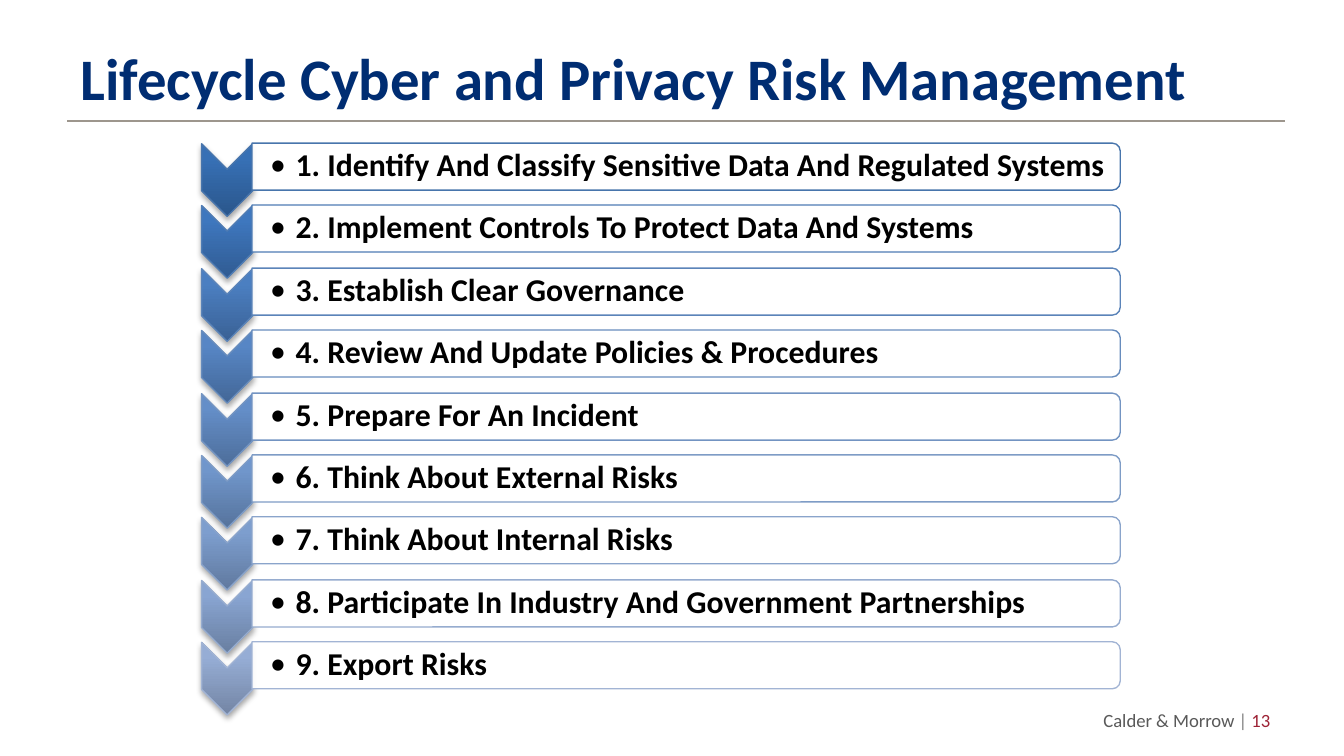
from lxml import etree
from pptx import Presentation
from pptx.dml.color import RGBColor
from pptx.enum.shapes import MSO_CONNECTOR, MSO_SHAPE
from pptx.enum.text import MSO_ANCHOR, PP_ALIGN
from pptx.oxml import parse_xml
from pptx.oxml.ns import qn
from pptx.util import Pt

PX = 9144  # 100 px to the inch
NS = 'xmlns:a="http://schemas.openxmlformats.org/drawingml/2006/main"'

STEPS = [
    "Identify And Classify Sensitive Data And Regulated Systems",
    "Implement Controls To Protect Data And Systems",
    "Establish Clear Governance",
    "Review And Update Policies & Procedures",
    "Prepare For An Incident",
    "Think About External Risks",
    "Think About Internal Risks",
    "Participate In Industry And Government Partnerships",
    "Export Risks",
]
# Each row: outline, then gradient stops at 0, 80 and 100 %
FIRST = ["4875AC", "2A568B", "3770B5", "3570B8"]
SECOND = ["4F7CB4", "305B92", "3E77BE", "3C77C1"]
LAST = ["A2B4D4", "7385A4", "96ADD5", "95ADD7"]


def color(code):
    return RGBColor.from_string(code)


def blend(start, end, part):
    pairs = zip(bytes.fromhex(start), bytes.fromhex(end))
    return "".join(f"{round(a + (b - a) * part):02X}" for a, b in pairs)


def tints(row):
    """The first row stands alone; the others fade evenly to the last."""
    if row == 0:
        return FIRST
    part = (row - 1) / (len(STEPS) - 2)
    return [blend(a, b, part) for a, b in zip(SECOND, LAST)]


class Deck:
    font = "Calibri"
    thin = Pt(0.75)

    def __init__(self, wide):
        """Start a 16:9 deck with one blank slide."""
        self.prs = Presentation()
        self.prs.slide_width = wide * PX
        self.prs.slide_height = wide * PX * 9 // 16
        self.slide = self.prs.slides.add_slide(self.prs.slide_layouts[6])

    def rule(self, x1, x2, y, tint):
        line = self.slide.shapes.add_connector(
            MSO_CONNECTOR.STRAIGHT, x1 * PX, y * PX, x2 * PX, y * PX)
        line.line.color.rgb = color(tint)
        line.line.width = self.thin
        etree.SubElement(line._element.spPr, qn("a:effectLst"))

    def text(self, box, runs, size, bold=False, align=PP_ALIGN.LEFT,
             inset=None, bullet=False):
        """Add a text box; runs is a list of (words, colour) pairs."""
        shape = self.slide.shapes.add_textbox(*(n * PX for n in box))
        frame = shape.text_frame
        frame.word_wrap = True
        frame.vertical_anchor = MSO_ANCHOR.MIDDLE
        if inset:
            (frame.margin_left, frame.margin_top, frame.margin_right,
             frame.margin_bottom) = (n * PX for n in inset)
        para = frame.paragraphs[0]
        para.alignment = align
        if bullet:
            para.level = 1
            para.line_spacing = 0.9
            props = para._p.get_or_add_pPr()
            props.set("marL", str(19 * PX))
            props.set("indent", str(-19 * PX))
            props.append(parse_xml(
                f'<a:buFont {NS} typeface="{self.font}"/>'))
            props.append(parse_xml(f'<a:buChar {NS} char="•"/>'))
        for words, tint in runs:
            run = para.add_run()
            run.text = words
            run.font.name = self.font
            run.font.size = Pt(size)
            run.font.bold = bold
            run.font.color.rgb = color(tint)

    def turned(self, kind, box, edge):
        """Add an outlined shape rotated a quarter turn."""
        shape = self.slide.shapes.add_shape(kind, *(n * PX for n in box))
        shape.rotation = 90
        shape.shadow.inherit = False
        shape.line.color.rgb = color(edge)
        shape.line.width = self.thin
        return shape

    def arrow(self, box, edge, stops):
        shape = self.turned(MSO_SHAPE.CHEVRON, box, edge)
        marks = "".join(
            f'<a:gs pos="{pos}000"><a:srgbClr val="{tint}"/></a:gs>'
            for pos, tint in zip((0, 80, 100), stops))
        props = shape._element.spPr
        props.find(qn("a:prstGeom")).addnext(parse_xml(
            f'<a:gradFill {NS} rotWithShape="0"><a:gsLst>{marks}</a:gsLst>'
            '<a:lin ang="16200000" scaled="0"/></a:gradFill>'))
        props.find(qn("a:effectLst")).append(parse_xml(
            f'<a:outerShdw {NS} blurRad="40000" dist="23000" dir="5400000" '
            'rotWithShape="0"><a:srgbClr val="000000">'
            '<a:alpha val="35000"/></a:srgbClr></a:outerShdw>'))

    def bar(self, box, edge):
        shape = self.turned(MSO_SHAPE.ROUND_2_SAME_RECTANGLE, box, edge)
        shape.fill.solid()
        shape.fill.fore_color.rgb = color("FFFFFF")
        fill = shape._element.spPr.find(qn("a:solidFill"))
        etree.SubElement(fill[0], qn("a:alpha"), val="90000")


def main():
    deck = Deck(1000)
    deck.rule(50, 956, 90, "9D968D")
    deck.text((50, 23, 908, 68),
              [("Lifecycle Cyber and Privacy Risk Management", "002D72")],
              31.5, bold=True)
    deck.text((722, 522, 233, 27),
              [("Calder & Morrow ", "595959"), ("| ", "808080"),
               ("13", "9D2235")], 10, align=PP_ALIGN.RIGHT)
    for row, step in enumerate(STEPS):
        drop = round(row * 371 / 8)
        edge, *stops = tints(row)
        deck.arrow((142, 115 + drop, 54, 38), edge, stops)
        deck.bar((493, drop - 199, 35, 646), edge)
        deck.text((188, 108 + drop, 644, 32),
                  [(f"{row + 1}. {step}", "000000")], 17, bold=True,
                  inset=(13, 1, 1, 1), bullet=True)
    deck.prs.save("out.pptx")


if __name__ == "__main__":
    main()
